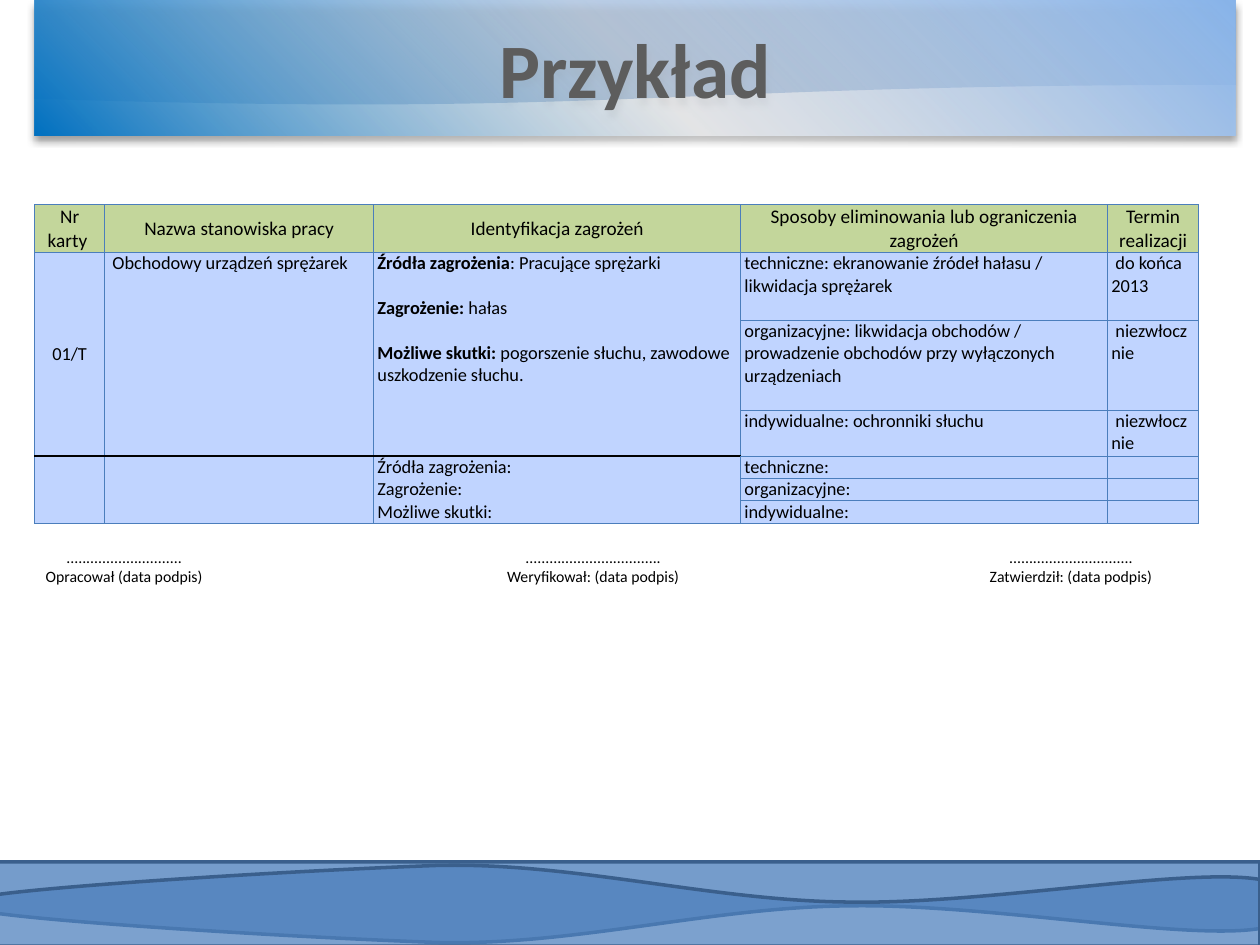
"""Build the slide with an example hazard card."""
from dataclasses import dataclass

from lxml.etree import SubElement
from pptx import Presentation
from pptx.dml.color import RGBColor
from pptx.enum.shapes import MSO_SHAPE
from pptx.enum.text import MSO_ANCHOR, PP_ALIGN
from pptx.oxml.ns import qn
from pptx.util import Pt

HARD_SPACE = chr(160)


@dataclass(frozen=True)
class Theme:
    """Colours and type sizes of the slide."""
    font: str = "Calibri"
    title_size: float = 44
    header_size: float = 11
    body_size: float = 10.5
    sign_size: float = 9
    title: str = "5D5D5D"
    text: str = "000000"
    wave: str = "4F81BD"
    wave_line: str = "3A5F8C"
    header: str = "C3D69B"
    body: str = "C0D4FF"
    grid: str = "4B7EBC"
    divider: str = "000000"
    banner: tuple = ((0, "0070C0", 100), (50, "F9FBFE", 62), (100, "87B3E9", 100))


def rgb(code):
    """Return the colour for a hex code."""
    return RGBColor.from_string(code)


def child(parent, tag, **attributes):
    """Add a drawing element below the parent."""
    values = {key: str(value) for key, value in attributes.items()}
    return SubElement(parent, qn(f"a:{tag}"), values)


def add_color(parent, code, opacity=100):
    """Add a colour with its opacity in percent."""
    color = child(parent, "srgbClr", val=code)
    if opacity < 100:
        child(color, "alpha", val=opacity * 1000)


def add_shadow(parent, blur, distance, opacity):
    """Add a shadow that falls straight down."""
    effects = child(parent, "effectLst")
    shadow = child(effects, "outerShdw", blurRad=Pt(blur), dist=Pt(distance),
                   dir=5400000, algn="t", rotWithShape=0)
    add_color(shadow, "000000", opacity)


def write(paragraph, text, *, size, font, color, bold=False, align=PP_ALIGN.LEFT):
    """Add a formatted run to a paragraph and return it."""
    paragraph.alignment = align
    run = paragraph.add_run()
    run.text = text
    run.font.size, run.font.name, run.font.bold = Pt(size), font, bold
    run.font.color.rgb = rgb(color)
    return run


def bend(lines):
    """Turn each three successive lines into one cubic curve."""
    for start in range(0, len(lines), 3):
        group = lines[start:start + 3]
        outline = group[0].getparent()
        curve = child(outline, "cubicBezTo")
        outline.replace(group[0], curve)
        for line in group:
            curve.append(line[0])
        for line in group[1:]:
            outline.remove(line)


class HazardSlide:
    """Holds the theme and the current slide."""

    def __init__(self, slide, theme):
        self.slide, self.theme = slide, theme

    def style(self, size, **extra):
        """Return the text format for a size."""
        return {"size": size, "font": self.theme.font, "color": self.theme.text, **extra}

    def wave(self, corners, controls, opacity):
        """Draw one translucent wave from straight and curved edges."""
        points = [(Pt(x), Pt(y)) for x, y in corners + controls]
        builder = self.slide.shapes.build_freeform(*points[0])
        builder.add_line_segments(points[1:], close=True)
        wave = builder.convert_to_shape()
        edges = list(wave.element.spPr.iter(qn("a:lnTo")))
        first = len(corners) - 1
        bend(edges[first:first + len(controls)])
        wave.shadow.inherit = False
        wave.fill.solid()
        wave.fill.fore_color.rgb = rgb(self.theme.wave)
        fill_color = wave.element.spPr.find(qn("a:solidFill"))[0]
        child(fill_color, "alpha", val=opacity * 1000)
        wave.line.color.rgb = rgb(self.theme.wave_line)
        wave.line.width = Pt(2)

    def banner(self, left, top, width, height):
        """Draw the wavy shape behind the title."""
        banner = self.slide.shapes.add_shape(
            MSO_SHAPE.FLOWCHART_DOCUMENT, Pt(left), Pt(top), Pt(width), Pt(height))
        banner.shadow.inherit = False
        banner.fill.solid()
        banner.fill.fore_color.rgb = rgb(self.theme.wave)
        banner.line.fill.background()

    def title(self, text, left, top, width, height):
        """Place the title in front of its banner."""
        title = self.slide.shapes.title
        title.left, title.top, title.width, title.height = map(Pt, (left, top, width, height))
        gradient = child(title.element.spPr, "gradFill", rotWithShape=1)
        stops = child(gradient, "gsLst")
        for position, code, opacity in self.theme.banner:
            add_color(child(stops, "gs", pos=position * 1000), code, opacity)
        child(gradient, "lin", ang=315 * 60000, scaled=0)
        add_shadow(title.element.spPr, 4, 3, 40)
        title.text_frame.vertical_anchor = MSO_ANCHOR.MIDDLE
        write(title.text_frame.paragraphs[0], text, size=self.theme.title_size,
              font=self.theme.font, color=self.theme.title, bold=True, align=PP_ALIGN.CENTER)
        title.element.getparent().append(title.element)

    def table(self, left, top, widths, heights):
        """Add a table with plain body cells and a grid."""
        table = self.slide.shapes.add_table(
            len(heights), len(widths), Pt(left), Pt(top), Pt(sum(widths)), Pt(sum(heights))).table
        table.first_row = table.horz_banding = False
        for column, width in zip(table.columns, widths):
            column.width = Pt(width)
        for row, height in zip(table.rows, heights):
            row.height = Pt(height)
        for row in range(len(heights)):
            for column in range(len(widths)):
                black = {3: "lnB", 4: "lnT"}.get(row) if column < 3 else None
                self.cell(table.cell(row, column), row == 0, black)
        return table

    def cell(self, cell, is_header, black_side):
        """Set margins, borders and fill of a cell."""
        cell.margin_left = cell.margin_right = Pt(2.1)
        cell.margin_top = cell.margin_bottom = 0
        child(cell.text_frame.paragraphs[0]._p, "endParaRPr", sz=int(self.theme.body_size * 100))
        for side in ("lnL", "lnR", "lnT", "lnB"):
            is_black = side == black_side
            border = child(cell._tc.get_or_add_tcPr(), side, w=Pt(1 if is_black else 0.75))
            add_color(child(border, "solidFill"), self.theme.divider if is_black else self.theme.grid)
        cell.fill.solid()
        cell.fill.fore_color.rgb = rgb(self.theme.header if is_header else self.theme.body)

    def fill_cell(self, cell, lines, size, gap=0, centered=False):
        """Write lines, each a pair of bold label and plain text."""
        if centered:
            cell.vertical_anchor = MSO_ANCHOR.MIDDLE
        align = PP_ALIGN.CENTER if centered else PP_ALIGN.LEFT
        for index, (label, text) in enumerate(lines):
            frame = cell.text_frame
            paragraph = frame.add_paragraph() if index else frame.paragraphs[0]
            if index and gap:
                paragraph.space_before = Pt(gap)
            for part, bold in ((label, True), (text, False)):
                if part:
                    write(paragraph, part, **self.style(size, bold=bold, align=align))

    def signatures(self, lines, centers, left, top, width, height):
        """Set the signature lines on centred tab stops."""
        box = self.slide.shapes.add_textbox(Pt(left), Pt(top), Pt(width), Pt(height))
        frame = box.text_frame
        frame.word_wrap = True
        for index, parts in enumerate(lines):
            paragraph = frame.add_paragraph() if index else frame.paragraphs[0]
            tabs = child(paragraph._p.get_or_add_pPr(), "tabLst")
            for center in centers:
                child(tabs, "tab", pos=Pt(center - left) - frame.margin_left, algn="ctr")
            write(paragraph, "".join(f"\t{part}" for part in parts),
                  **self.style(self.theme.sign_size))


def main():
    """Build and save the slide."""
    deck = Presentation()
    deck.slide_width, deck.slide_height = Pt(720), Pt(540)
    theme = Theme()
    page = HazardSlide(deck.slides.add_slide(deck.slide_layouts[5]), theme)

    corners = [(-2, 492.5), (720, 492.5), (720, 530.6)]
    controls = [(678.2, 537.8), (563, 516.2), (484.6, 517.7),
                (406.1, 518.4), (327.6, 540.7), (249.1, 538.6),
                (169.9, 535.7), (41.8, 527.8), (-1.4, 522)]
    page.wave(corners, controls, 78)
    page.wave(*([(x, 1033.2 - y) for x, y in edge] for edge in (corners, controls)), 74)
    page.banner(19.8, 0, 686.2, 60.5)
    page.title("Przykład", 19.8, 0, 686.2, 77.3)

    table = page.table(19.8, 117, (40, 153.8, 209.7, 209.7, 52),
                       (27, 38.8, 51.4, 26.3, 12.8, 12.8, 12.8))
    headers = ("Nr karty ", "Nazwa stanowiska pracy", "Identyfikacja zagrożeń",
               "Sposoby eliminowania lub ograniczenia zagrożeń", "Termin realizacji")
    for column, header in enumerate(headers):
        page.fill_cell(table.cell(0, column), [("", header)], theme.header_size, centered=True)
    for first in (1, 4):
        for column in range(3):
            table.cell(first, column).merge(table.cell(first + 2, column))

    body = theme.body_size
    page.fill_cell(table.cell(1, 0), [("", "01/T")], body, centered=True)
    page.fill_cell(table.cell(1, 1), [("", HARD_SPACE + "Obchodowy urządzeń sprężarek")], body)
    hazards = [("Źródła zagrożenia", ": Pracujące sprężarki"), ("Zagrożenie: ", "hałas"),
               ("Możliwe skutki: ", "pogorszenie słuchu, zawodowe uszkodzenie słuchu.")]
    page.fill_cell(table.cell(1, 2), hazards, body, gap=12.8)
    blank_hazards = ("Źródła zagrożenia:", "Zagrożenie:", "Możliwe skutki:")
    page.fill_cell(table.cell(4, 2), [("", name) for name in blank_hazards], body)
    measures = (
        ("techniczne:", " ekranowanie źródeł hałasu / likwidacja sprężarek", "do końca 2013"),
        ("organizacyjne:", " likwidacja obchodów / prowadzenie obchodów przy wyłączonych urządzeniach",
         "niezwłocznie"),
        ("indywidualne:", " ochronniki słuchu", "niezwłocznie"))
    for row, (kind, measure, deadline) in enumerate(measures, 1):
        page.fill_cell(table.cell(row, 3), [("", kind + measure)], body)
        page.fill_cell(table.cell(row, 4), [("", HARD_SPACE + deadline)], body)
        page.fill_cell(table.cell(row + 3, 3), [("", kind)], body)

    dots = ["." * count for count in (29, 34, 31)]
    roles = ("Opracował (data podpis)", "Weryfikował: (data podpis)", "Zatwierdził: (data podpis)")
    page.signatures((dots, roles), (71, 339, 612), 0, 309.6, 705.6, 28.8)
    deck.save("out.pptx")


if __name__ == "__main__":
    main()
